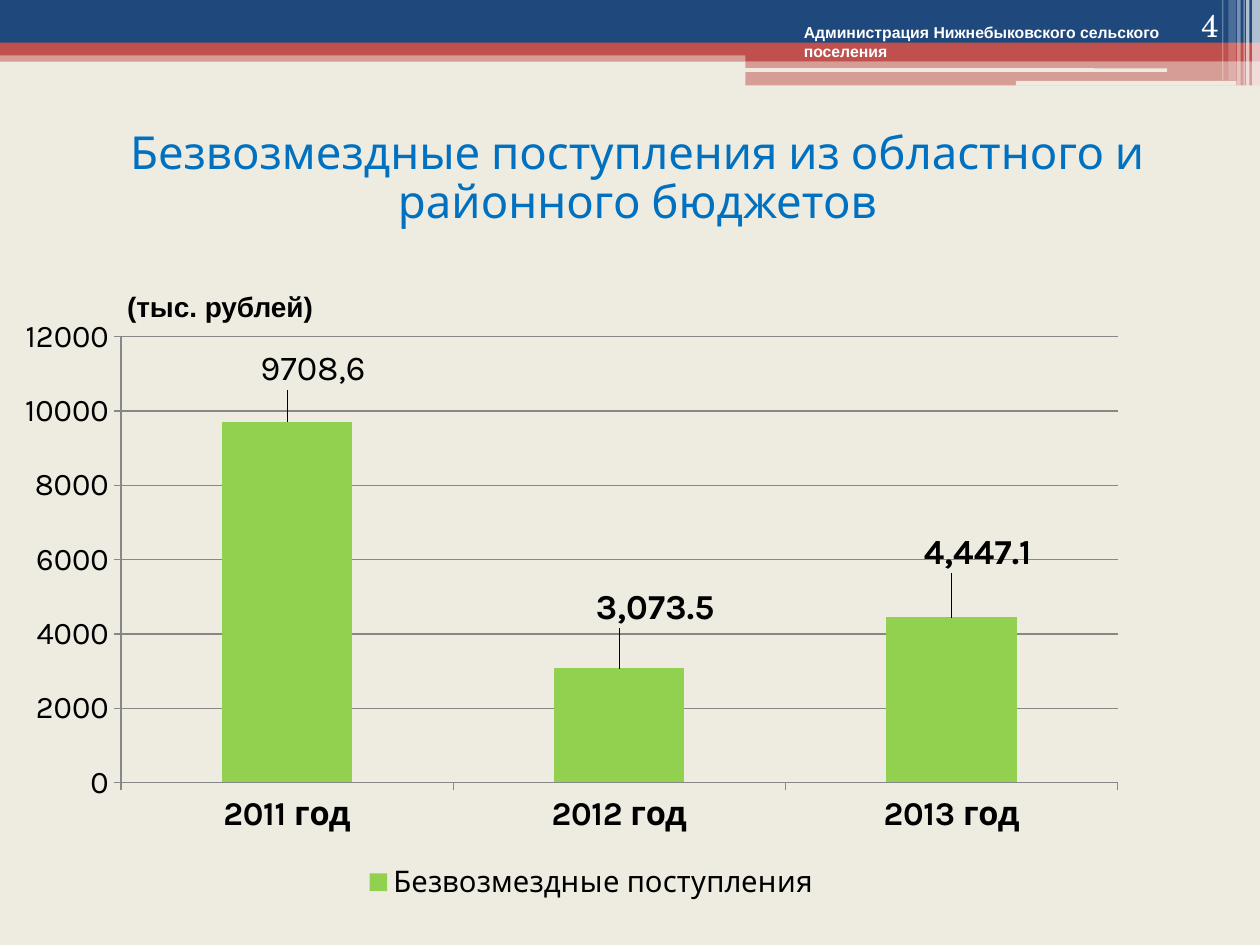
from lxml.etree import SubElement
from pptx import Presentation
from pptx.chart.data import CategoryChartData
from pptx.dml.color import RGBColor
from pptx.enum.chart import (XL_CHART_TYPE, XL_LABEL_POSITION,
                             XL_LEGEND_POSITION, XL_TICK_MARK)
from pptx.enum.shapes import MSO_SHAPE
from pptx.enum.text import MSO_ANCHOR, PP_ALIGN
from pptx.oxml import parse_xml
from pptx.oxml.ns import nsdecls, qn
from pptx.util import Pt

COLORS = {"paper": "EEECE1", "navy": "1F497D", "red": "C0504D",
          "white": "FFFFFF", "black": "000000", "blue": "0070C0",
          "green": "92D050", "grid": "878787"}


def color(name):
    return RGBColor.from_string(COLORS[name])


def style(font, size, face, name="black", bold=False):
    font.size, font.name, font.bold = Pt(size), face, bold
    font.color.rgb = color(name)


def add_bar(slide, box, name, alpha=100, kind=MSO_SHAPE.RECTANGLE):
    bar = slide.shapes.add_shape(kind, *map(Pt, box))
    bar.shadow.inherit = False
    bar.fill.solid()
    bar.fill.fore_color.rgb = color(name)
    bar.line.fill.background()
    if alpha < 100:
        tone = bar.fill._xPr.find(".//" + qn("a:srgbClr"))
        SubElement(tone, qn("a:alpha"), val=str(alpha * 1000))


def add_text(slide, box, text, size, face, name="black", bold=False,
             align=PP_ALIGN.LEFT, anchor=MSO_ANCHOR.TOP, gap=1.0):
    frame = slide.shapes.add_textbox(*map(Pt, box)).text_frame
    frame.word_wrap = True
    frame.vertical_anchor = anchor
    para = frame.paragraphs[0]
    para.text, para.alignment, para.line_spacing = text, align, gap
    style(para.font, size, face, name, bold)


def add_band(slide, box):
    left, top, width, height = box
    split = left + 426
    half = width - 426
    # Full-width stripes, then the deeper block on the right
    for x, y, w, h, name, alpha in [
            (left, 28.8, width, 6.5, "red", 50),
            (left, 0, width, 24.5, "navy", 100),
            (left, 24.3, width, 7.4, "red", 100),
            (split, 28, half, 7, "red", 100),
            (split, 34.9, half, 14, "red", 50)]:
        add_bar(slide, (x, top + y, w, h), name, alpha)
    # Thin light rules
    for x, y, w, h in [(425.5, 39, 241.5, 2), (580.5, 46.2, 126, 2.7)]:
        add_bar(slide, (left + x, top + y, w, h), "paper",
                kind=MSO_SHAPE.ROUNDED_RECTANGLE)
    # Glassy strips, placed by distance from the right edge
    for back, w, h, alpha in [
            (4.5, 4.5, height, 65), (8, 2, height, 65), (9.4, 0.7, height, 60),
            (13, 2, height, 40), (18, 4.3, 46, 20), (21.6, 0.7, 46, 30)]:
        add_bar(slide, (left + width - back, top, w, h), "white", alpha)


def layout(x, y, size=None):
    """Manual chart layout: an offset, or an inner plot area with a size."""
    tags = [("x", x), ("y", y)]
    if size:
        tags = ([("layoutTarget", "inner"), ("xMode", "edge"),
                 ("yMode", "edge")] + tags + [("w", size[0]), ("h", size[1])])
    body = "".join(f'<c:{tag} val="{val}"/>' for tag, val in tags)
    return parse_xml(f'<c:layout {nsdecls("c")}><c:manualLayout>{body}'
                     '</c:manualLayout></c:layout>')


def add_labels(series):
    shifts = [(0.024, -0.045), (0.033, -0.058), (0.024, -0.065)]
    for i, shift in enumerate(shifts):
        label = series.points[i].data_label
        if i == 0:
            para = label.text_frame.paragraphs[0]
            para.text = "9708,6"
            style(para.font, 20, "Karla")
        else:
            style(label.font, 20, "Karla", bold=True)
        label.position = XL_LABEL_POSITION.OUTSIDE_END
        node = series.points[i].data_label._dLbl
        place = layout(*shift)
        node.find(qn("c:idx")).addnext(place)
        if i:
            place.addnext(parse_xml(
                f'<c:numFmt {nsdecls("c")} formatCode="#,##0.0" '
                'sourceLinked="0"/>'))


def add_columns(slide, box):
    data = CategoryChartData()
    data.categories = ["2011 год", "2012 год", "2013 год"]
    data.add_series("Безвозмездные поступления", [9708.6, 3073.5, 4447.1])
    chart = slide.shapes.add_chart(XL_CHART_TYPE.COLUMN_CLUSTERED,
                                   *map(Pt, box), data).chart
    style(chart.font, 18, "TeX Gyre Schola")
    chart.has_title = False

    # Legend
    chart.has_legend = True
    chart.legend.position = XL_LEGEND_POSITION.BOTTOM
    chart.legend.include_in_layout = False
    style(chart.legend.font, 17, "Karla")

    # Axes
    cats, vals = chart.category_axis, chart.value_axis
    style(cats.tick_labels.font, 19, "Karla", bold=True)
    style(vals.tick_labels.font, 18, "Karla")
    vals.minimum_scale, vals.maximum_scale, vals.major_unit = 0, 12000, 2000
    vals.tick_labels.number_format = "General"
    vals.tick_labels.number_format_is_linked = False
    vals.has_major_gridlines = True
    for axis in (cats, vals):
        axis.major_tick_mark = XL_TICK_MARK.OUTSIDE
    for part in (cats, vals, vals.major_gridlines):
        part.format.line.color.rgb = color("grid")
        part.format.line.width = Pt(0.75)

    # Columns
    plot = chart.plots[0]
    plot.gap_width, plot.vary_by_categories = 155, False
    series = plot.series[0]
    series.format.fill.solid()
    series.format.fill.fore_color.rgb = color("green")
    add_labels(series)

    # Plot area
    area = chart._chartSpace.find(".//" + qn("c:plotArea"))
    for old in area.findall(qn("c:layout")):
        area.remove(old)
    area.insert(0, layout(0.068, 0.045, (0.915, 0.748)))


def main():
    deck = Presentation()
    deck.slide_width, deck.slide_height = Pt(720), Pt(540)
    slide = deck.slides.add_slide(deck.slide_layouts[6])
    slide.background.fill.solid()
    slide.background.fill.fore_color.rgb = color("paper")

    add_band(slide, (0, 0, 720, 49))
    add_text(slide, (8.6, 60.5, 711.4, 84.2),
             "Безвозмездные поступления из областного и районного бюджетов",
             26, "Karla", "blue", align=PP_ALIGN.CENTER,
             anchor=MSO_ANCHOR.MIDDLE, gap=0.9)
    add_text(slide, (65.5, 162, 130.3, 26.6), "(тыс. рублей)",
             16, "Arial", bold=True)
    add_text(slide, (452.2, 9.4, 223.9, 28.8),
             "Администрация Нижнебыковского сельского поселения",
             9, "Arial", "white", bold=True)
    add_columns(slide, (14.4, 177.1, 635, 340.6))
    add_text(slide, (643.7, 0, 59.8, 28.8), "4", 18, "TeX Gyre Schola",
             "white", align=PP_ALIGN.RIGHT, anchor=MSO_ANCHOR.BOTTOM)
    deck.save("out.pptx")


if __name__ == "__main__":
    main()
